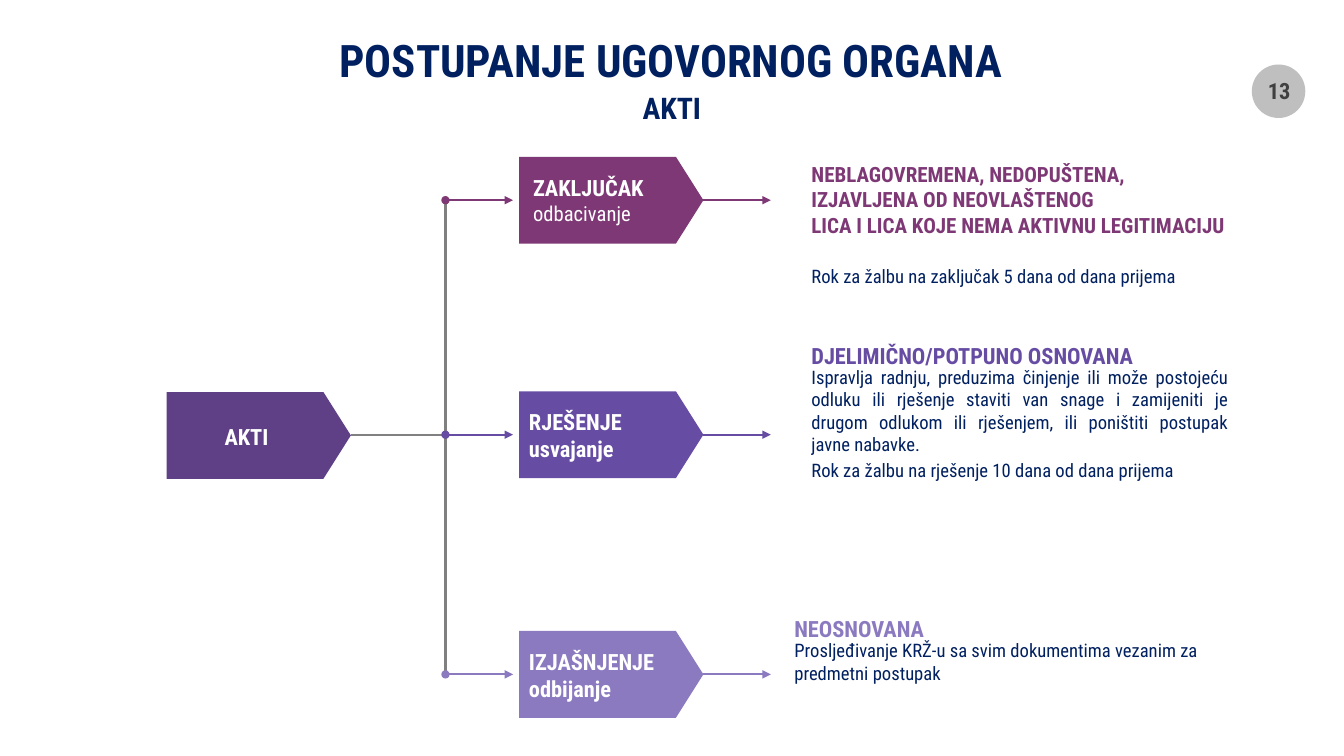
from dataclasses import dataclass
from typing import Optional

from lxml.etree import SubElement
from pptx import Presentation
from pptx.dml.color import RGBColor
from pptx.enum.shapes import MSO_CONNECTOR, MSO_SHAPE
from pptx.enum.text import MSO_ANCHOR, PP_ALIGN
from pptx.oxml.ns import qn
from pptx.util import Pt


@dataclass(frozen=True)
class Theme:
    """Colours, font and type sizes of the slide."""
    font: str = "Roboto Condensed"
    navy: str = "002060"
    root: str = "5F3F85"
    plum: str = "7E3875"
    violet: str = "664CA3"
    lilac: str = "8B7AC0"
    trunk: str = "808080"
    badge: str = "BFBFBF"
    badge_text: str = "404040"
    white: str = "FFFFFF"
    title: float = 32
    subtitle: float = 21.3
    heading: float = 16
    conditions: float = 15
    label_light: float = 14.7
    body: float = 13.3


@dataclass(frozen=True)
class Box:
    """A rectangle in points."""
    left: float
    top: float
    width: float
    height: float


@dataclass(frozen=True)
class Act:
    """One branch: its plate, its label and the explanation beside it."""
    colour: str
    centre: float
    label: tuple[str, str]
    label_box: Box
    grounds: tuple[str, ...]
    grounds_box: Box
    details: tuple[str, ...]
    details_box: Box
    grounds_size: float = 16
    label_second_size: float = 16
    label_second_bold: bool = True
    details_align: PP_ALIGN = PP_ALIGN.LEFT


THEME = Theme()
PLATE_WIDTH, PLATE_HEIGHT, PLATE_TIP = 131.6, 62, 19.6
ROOT_LEFT, ROOT_CENTRE = 119, 311
PLATE_LEFT, TRUNK_X = 370.8, 318.2
ARROW_IN_END, ARROW_OUT_LENGTH = 366.5, 48.2
PLAIN_INSETS = (0, 0, 0, 0)
LABEL_INSETS = (7.2, 3.6, 7.2, 3.6)

ACTS = (
    Act(THEME.plum, 143, ("ZAKLJUČAK", "оdbacivanje"), Box(373.7, 121, 113, 44.6),
        ("NEBLAGOVREMENA, NEDOPUŠTENA,", "IZJAVLJENA OD NEOVLAŠTENOG",
         "LICA I LICA KOJE NEMA AKTIVNU LEGITIMACIJU"), Box(579.6, 115.2, 366.5, 54.7),
        ("Rok za žalbu na zaključak 5 dana od dana prijema",), Box(579.6, 188.9, 267.8, 32.4),
        grounds_size=THEME.conditions, label_second_size=THEME.label_light,
        label_second_bold=False),
    Act(THEME.violet, 310.5, ("RJEŠENJE", "usvajanje"), Box(370.8, 288, 98.6, 46),
        ("DJELIMIČNO/POTPUNO OSNOVANA",), Box(579.6, 244.1, 280.1, 19.4),
        ("Ispravlja radnju, preduzima činjenje ili može postojeću odluku ili rješenje "
         "staviti van snage i zamijeniti je drugom odlukom ili rješenjem, ili poništiti "
         "postupak javne nabavke.",
         "Rok za žalbu na rješenje 10 dana od dana prijema"), Box(579.6, 261.4, 298.1, 84.2),
        details_align=PP_ALIGN.JUSTIFY),
    Act(THEME.lilac, 481.7, ("IZJAŠNJENJE", "odbijanje"), Box(370.8, 459.4, 144, 46),
        ("NEOSNOVANA",), Box(567.4, 439.2, 114.5, 19.4),
        ("Prosljeđivanje KRŽ-u sa svim dokumentima vezanim za predmetni postupak",),
        Box(567.4, 456.5, 294.5, 32.4)),
)


def add_text(slide, box: Box, lines: tuple[str, ...], *, size: float, colour: str,
             bold: bool = False, align: PP_ALIGN = PP_ALIGN.LEFT,
             anchor: MSO_ANCHOR = MSO_ANCHOR.TOP, insets: tuple = PLAIN_INSETS,
             gap: float = 0, last_size: Optional[float] = None,
             last_bold: Optional[bool] = None) -> None:
    """Add a text box with one paragraph per line; the last may differ in format."""
    frame = slide.shapes.add_textbox(
        Pt(box.left), Pt(box.top), Pt(box.width), Pt(box.height)).text_frame
    frame.word_wrap = True
    frame.vertical_anchor = anchor
    (frame.margin_left, frame.margin_top,
     frame.margin_right, frame.margin_bottom) = map(Pt, insets)
    for index, line in enumerate(lines):
        paragraph = frame.add_paragraph() if index else frame.paragraphs[0]
        paragraph.alignment = align
        if index and gap:
            paragraph.space_before = Pt(gap)
        run = paragraph.add_run()
        run.text = line
        is_last = index == len(lines) - 1
        run.font.name = THEME.font
        run.font.size = Pt(last_size if is_last and last_size else size)
        run.font.bold = last_bold if is_last and last_bold is not None else bold
        run.font.color.rgb = RGBColor.from_string(colour)


def add_filled(slide, kind: MSO_SHAPE, box: Box, colour: str):
    """Add a flat preset shape without outline."""
    shape = slide.shapes.add_shape(
        kind, Pt(box.left), Pt(box.top), Pt(box.width), Pt(box.height))
    shape.shadow.inherit = False
    shape.fill.solid()
    shape.fill.fore_color.rgb = RGBColor.from_string(colour)
    shape.line.fill.background()
    return shape


def add_plate(slide, left: float, centre: float, colour: str) -> None:
    """Add a plate pointing right, centred on a height."""
    box = Box(left, centre - PLATE_HEIGHT / 2, PLATE_WIDTH, PLATE_HEIGHT)
    plate = add_filled(slide, MSO_SHAPE.PENTAGON, box, colour)
    plate.adjustments[0] = PLATE_TIP / PLATE_HEIGHT


def add_line(slide, start: tuple[float, float], end: tuple[float, float], colour: str,
             head: Optional[str] = None, tail: Optional[str] = None) -> None:
    """Add a straight line with optional end marks."""
    connector = slide.shapes.add_connector(
        MSO_CONNECTOR.STRAIGHT, Pt(start[0]), Pt(start[1]), Pt(end[0]), Pt(end[1]))
    connector.line.width = Pt(1.5)
    connector.line.color.rgb = RGBColor.from_string(colour)
    outline = connector.line._get_or_add_ln()
    for tag, mark in (("a:headEnd", head), ("a:tailEnd", tail)):
        if mark:
            SubElement(outline, qn(tag)).set("type", mark)
    SubElement(connector._element.spPr, qn("a:effectLst"))


def add_act(slide, act: Act) -> None:
    """Draw one branch from the trunk to its explanation."""
    plate_end = PLATE_LEFT + PLATE_WIDTH
    add_line(slide, (TRUNK_X, act.centre), (ARROW_IN_END, act.centre), act.colour,
             head="oval", tail="triangle")
    add_plate(slide, PLATE_LEFT, act.centre, act.colour)
    add_line(slide, (plate_end, act.centre), (plate_end + ARROW_OUT_LENGTH, act.centre),
             act.colour, tail="triangle")
    add_text(slide, act.label_box, act.label, size=THEME.heading, colour=THEME.white,
             bold=True, insets=LABEL_INSETS, last_size=act.label_second_size,
             last_bold=act.label_second_bold)
    add_text(slide, act.grounds_box, act.grounds, size=act.grounds_size,
             colour=act.colour, bold=True, anchor=MSO_ANCHOR.MIDDLE)
    add_text(slide, act.details_box, act.details, size=THEME.body, colour=THEME.navy,
             align=act.details_align, gap=2.7)


def main() -> None:
    """Build and save the slide."""
    presentation = Presentation()
    presentation.slide_width, presentation.slide_height = Pt(960), Pt(540)
    slide = presentation.slides.add_slide(presentation.slide_layouts[6])

    add_filled(slide, MSO_SHAPE.OVAL, Box(894.2, 46.1, 38.2, 38.2), THEME.badge)
    add_text(slide, Box(891.4, 47.5, 44.6, 34.6), ("13",), size=THEME.heading,
             colour=THEME.badge_text, bold=True, align=PP_ALIGN.CENTER,
             anchor=MSO_ANCHOR.MIDDLE, insets=(9.4, 5, 9.4, 5))
    add_text(slide, Box(229.7, 20.9, 499.7, 43.9), ("POSTUPANJE UGOVORNOG ORGANA",),
             size=THEME.title, colour=THEME.navy, bold=True, align=PP_ALIGN.CENTER,
             anchor=MSO_ANCHOR.MIDDLE)
    add_text(slide, Box(343.4, 66.2, 272.9, 20.9), ("АKTI",), size=THEME.subtitle,
             colour=THEME.navy, bold=True, align=PP_ALIGN.CENTER, anchor=MSO_ANCHOR.MIDDLE)

    add_plate(slide, ROOT_LEFT, ROOT_CENTRE, THEME.root)
    add_text(slide, Box(122.4, 298.8, 107.3, 26.6), ("АKTI",), size=THEME.heading,
             colour=THEME.white, bold=True, align=PP_ALIGN.CENTER, insets=LABEL_INSETS)
    add_line(slide, (ROOT_LEFT + PLATE_WIDTH, ROOT_CENTRE), (TRUNK_X, ROOT_CENTRE),
             THEME.trunk)
    for outer in (ACTS[0], ACTS[-1]):
        add_line(slide, (TRUNK_X, ROOT_CENTRE), (TRUNK_X, outer.centre), THEME.trunk)
    for act in ACTS:
        add_act(slide, act)

    presentation.save("out.pptx")


if __name__ == "__main__":
    main()
